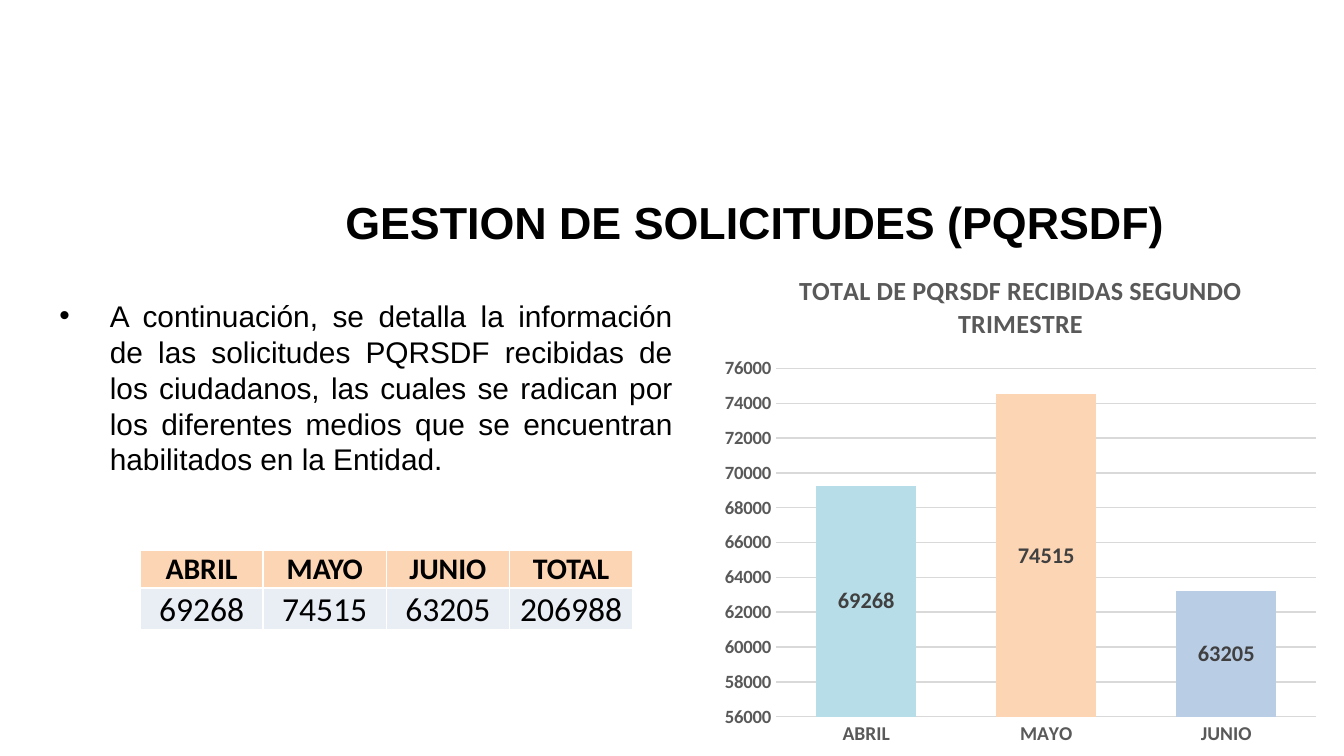
import dataclasses
import typing

import lxml.etree
import pptx
import pptx.chart.data
import pptx.dml.color
import pptx.enum.chart
import pptx.enum.text
import pptx.oxml
import pptx.oxml.ns
import pptx.util

SCALE = 9525
Align = pptx.enum.text.PP_ALIGN
Anchor = pptx.enum.text.MSO_ANCHOR
qn = pptx.oxml.ns.qn


@dataclasses.dataclass(frozen=True)
class Theme:
    sans: str = "Arial"
    chart: str = "Calibri"
    ink: str = "000000"
    white: str = "FFFFFF"
    gray: str = "595959"
    dark: str = "404040"
    grid: str = "D9D9D9"
    pale: str = "E9EDF4"
    teal: str = "B7DEE8"
    peach: str = "FCD5B5"
    blue: str = "B9CDE5"
    title: float = 24
    body: float = 16
    total: float = 18
    head: float = 14
    label: float = 12
    month: float = 10.5
    tick: float = 10


@dataclasses.dataclass(frozen=True)
class Box:
    left: int
    top: int
    width: int
    height: int

    def emu(self) -> tuple[int, ...]:
        return tuple(px(n) for n in dataclasses.astuple(self))


@dataclasses.dataclass(frozen=True)
class Month:
    name: str
    count: int
    color: str


THEME = Theme()
MONTHS = (
    Month("ABRIL", 69268, THEME.teal),
    Month("MAYO", 74515, THEME.peach),
    Month("JUNIO", 63205, THEME.blue),
)
INTRO = (
    "A continuación, se detalla la información de las solicitudes PQRSDF "
    "recibidas de los ciudadanos, las cuales se radican por los diferentes "
    "medios que se encuentran habilitados en la Entidad."
)


def px(count: int) -> int:
    return pptx.util.Emu(count * SCALE)


def rgb(color: str) -> pptx.dml.color.RGBColor:
    return pptx.dml.color.RGBColor.from_string(color)


def style(font: typing.Any, face: str, size: float, color: str, bold: bool) -> None:
    font.name = face
    font.size = pptx.util.Pt(size)
    font.bold = bold
    font.color.rgb = rgb(color)


def write(para: typing.Any, text: str, face: str, size: float,
          color: str = THEME.ink, bold: bool = False) -> None:
    run = para.add_run()
    run.text = text
    style(run.font, face, size, color, bold)


def draw_title(slide: typing.Any, box: Box) -> None:
    title = slide.shapes.title
    title.left, title.top, title.width, title.height = box.emu()
    frame = title.text_frame
    frame.auto_size = pptx.enum.text.MSO_AUTO_SIZE.NONE
    frame.vertical_anchor = Anchor.MIDDLE
    para = frame.paragraphs[0]
    para.alignment = Align.LEFT
    write(para, "GESTION DE SOLICITUDES (PQRSDF)", THEME.sans, THEME.title, bold=True)


def draw_intro(slide: typing.Any, box: Box) -> None:
    frame = slide.shapes.add_textbox(*box.emu()).text_frame
    frame.word_wrap = True
    para = frame.paragraphs[0]
    props = para._p.get_or_add_pPr()
    props.set("marL", str(px(36)))
    props.set("indent", str(px(-36)))
    lxml.etree.SubElement(props, qn("a:buFont")).set("typeface", THEME.sans)
    lxml.etree.SubElement(props, qn("a:buChar")).set("char", "•")
    para.alignment = Align.JUSTIFY
    write(para, INTRO, THEME.sans, THEME.body)


def edge(cell: typing.Any) -> None:
    props = cell._tc.get_or_add_tcPr()
    for place, side in enumerate(("lnL", "lnR", "lnT", "lnB")):
        line = pptx.oxml.parse_xml(
            f'<a:{side} xmlns:a="http://schemas.openxmlformats.org/drawingml/2006/main" '
            f'w="12700"><a:solidFill><a:srgbClr val="{THEME.white}"/></a:solidFill></a:{side}>'
        )
        props.insert(place, line)


def draw_table(slide: typing.Any, box: Box) -> None:
    total = sum(month.count for month in MONTHS)
    rows = (
        ([month.name for month in MONTHS] + ["TOTAL"], 27, THEME.peach,
         THEME.body, True, Anchor.BOTTOM),
        ([str(month.count) for month in MONTHS] + [str(total)], 30, THEME.pale,
         THEME.total, False, Anchor.MIDDLE),
    )
    span = len(MONTHS) + 1
    table = slide.shapes.add_table(len(rows), span, *box.emu()).table
    for column in table.columns:
        column.width = px(box.width // span)
    for y, (texts, height, fill, size, bold, anchor) in enumerate(rows):
        table.rows[y].height = px(height)
        for x, text in enumerate(texts):
            cell = table.cell(y, x)
            cell.margin_left = cell.margin_right = cell.margin_top = px(1)
            cell.margin_bottom = 0
            cell.vertical_anchor = anchor
            cell.fill.solid()
            cell.fill.fore_color.rgb = rgb(fill)
            edge(cell)
            para = cell.text_frame.paragraphs[0]
            para.alignment = Align.CENTER
            write(para, text, THEME.chart, size, bold=bold)


def draw_chart(slide: typing.Any, box: Box) -> None:
    data = pptx.chart.data.CategoryChartData()
    data.categories = [month.name for month in MONTHS]
    data.add_series("Series 1", [month.count for month in MONTHS])
    kind = pptx.enum.chart.XL_CHART_TYPE.COLUMN_STACKED
    chart = slide.shapes.add_chart(kind, *box.emu(), data).chart
    style(chart.font, THEME.chart, THEME.tick, THEME.ink, False)
    chart.has_legend = False
    chart.has_title = True
    chart.chart_title.include_in_layout = False
    write(chart.chart_title.text_frame.paragraphs[0],
          "TOTAL DE PQRSDF RECIBIDAS SEGUNDO TRIMESTRE",
          THEME.chart, THEME.head, THEME.gray, True)

    for axis, size in ((chart.category_axis, THEME.month), (chart.value_axis, THEME.tick)):
        axis.major_tick_mark = pptx.enum.chart.XL_TICK_MARK.NONE
        axis.minor_tick_mark = pptx.enum.chart.XL_TICK_MARK.NONE
        axis.format.line.fill.background()
        style(axis.tick_labels.font, THEME.chart, size, THEME.gray, True)
    scale = chart.value_axis
    scale.minimum_scale, scale.maximum_scale, scale.major_unit = 56000, 76000, 2000
    scale.has_major_gridlines = True
    grid = scale.major_gridlines.format.line
    grid.color.rgb = rgb(THEME.grid)
    grid.width = pptx.util.Pt(0.75)

    plot = chart.plots[0]
    plot.vary_by_categories = False
    plot.gap_width = 80
    plot.overlap = 100
    series = plot.series[0]
    for spot, month in enumerate(MONTHS):
        fill = series.points[spot].format.fill
        fill.solid()
        fill.fore_color.rgb = rgb(month.color)
    labels = series.data_labels
    labels.show_value = True
    labels.position = pptx.enum.chart.XL_LABEL_POSITION.CENTER
    style(labels.font, THEME.chart, THEME.label, THEME.dark, True)


def main() -> None:
    deck = pptx.Presentation()
    deck.slide_width, deck.slide_height = px(960), px(540)
    slide = deck.slides.add_slide(deck.slide_layouts[5])
    draw_title(slide, Box(237, 113, 707, 90))
    draw_intro(slide, Box(33, 208, 457, 145))
    draw_table(slide, Box(100, 393, 352, 57))
    draw_chart(slide, Box(509, 179, 440, 361))
    deck.save("out.pptx")


if __name__ == "__main__":
    main()
